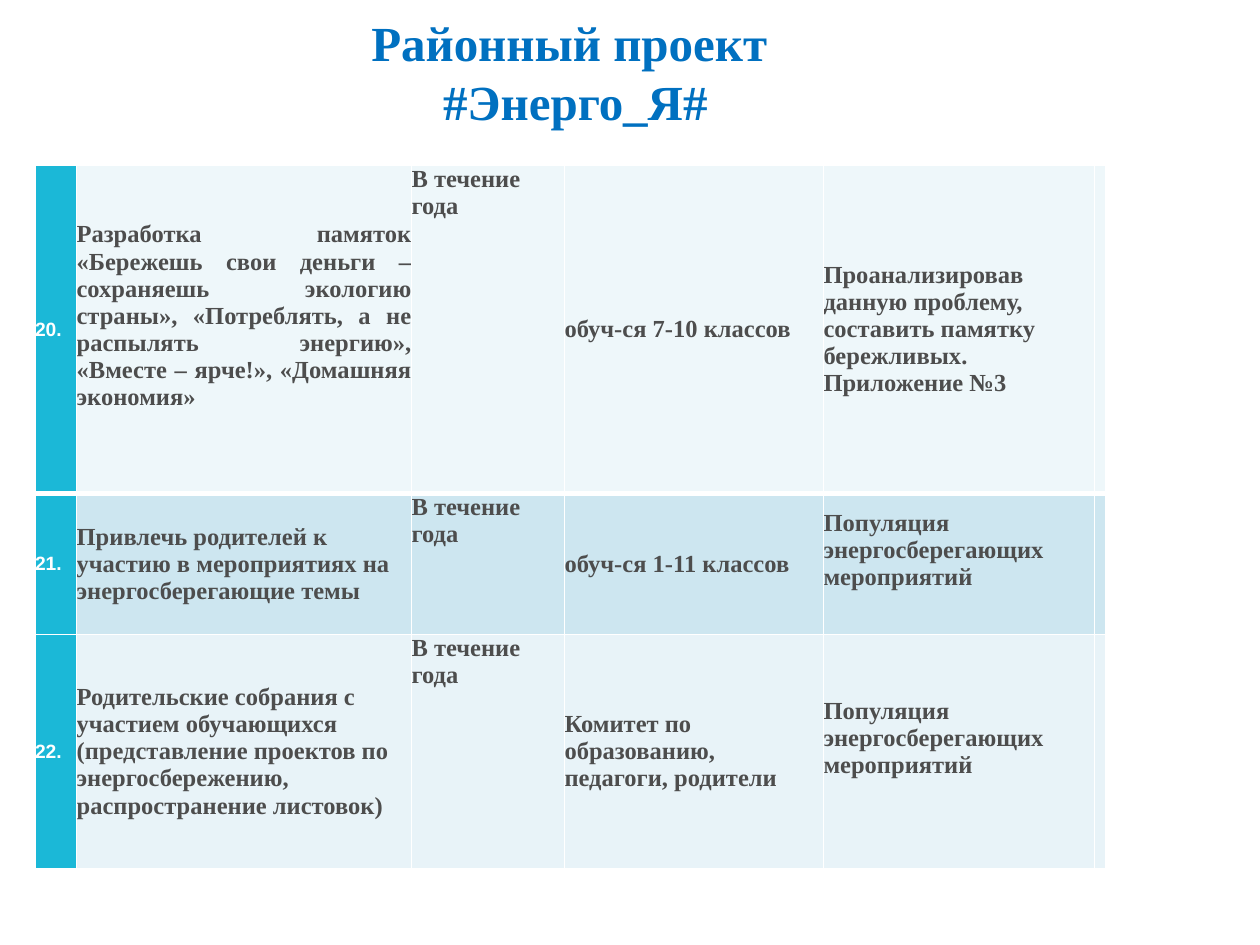
import pptx
import pptx.dml.color
import pptx.enum.text
import pptx.oxml
import pptx.oxml.ns
import pptx.util

Pt = pptx.util.Pt
ALIGN = pptx.enum.text.PP_ALIGN
ANCHOR = pptx.enum.text.MSO_ANCHOR
SERIF = "Times New Roman"
NUMBER_COLUMN, TASK_COLUMN, TIME_COLUMN, RESULT_COLUMN = 0, 1, 2, 4
LINE = 15.5  # height of one line of table text


def color(value):
    return pptx.dml.color.RGBColor.from_string(value)


class SlideBuilder:
    def __init__(self, slide):
        self.slide = slide
        self.title_color = "0070C0"
        self.text_color = "4D4D4D"
        self.number_fill = "1BB8D7"
        self.border_color = "FFFFFF"

    def style(self, paragraph, size, font, hex_color, alignment):
        paragraph.alignment = alignment
        paragraph.font.size = Pt(size)
        paragraph.font.name = font
        paragraph.font.bold = True
        paragraph.font.color.rgb = color(hex_color)

    def title(self, lines, left, top, width, height):
        shape = self.slide.shapes.add_textbox(Pt(left), Pt(top), Pt(width), Pt(height))
        frame = shape.text_frame
        frame.word_wrap = True
        frame.text = "\n".join(lines)
        for paragraph in frame.paragraphs:
            self.style(paragraph, 28, SERIF, self.title_color, ALIGN.CENTER)

    def borders(self, cell, widths):
        properties = cell._tc.get_or_add_tcPr()
        for side, width in widths.items():
            properties.append(pptx.oxml.parse_xml(
                f'<a:ln{side} {pptx.oxml.ns.nsdecls("a")} w="{Pt(width)}"><a:solidFill>'
                f'<a:srgbClr val="{self.border_color}"/></a:solidFill></a:ln{side}>'))

    def cell(self, cell, text, fill, is_number, alignment, anchor, bottom, widths):
        self.borders(cell, widths)
        cell.fill.solid()
        cell.fill.fore_color.rgb = color(fill)
        cell.margin_left = cell.margin_right = cell.margin_top = 0
        cell.margin_bottom = Pt(bottom)
        cell.vertical_anchor = anchor
        cell.text = text
        paragraph = cell.text_frame.paragraphs[0]
        if is_number:
            self.style(paragraph, 11, "Arial", "FFFFFF", alignment)
        else:
            self.style(paragraph, 14, SERIF, self.text_color, alignment)

    def table(self, rows, fills, left, top, widths, heights):
        frame = self.slide.shapes.add_table(
            len(heights), len(widths), Pt(left), Pt(top), Pt(sum(widths)), Pt(sum(heights)))
        table = frame.table
        for column, width in zip(table.columns, widths):
            column.width = Pt(width)
        for row, height in zip(table.rows, heights):
            row.height = Pt(height)
        for i, (texts, fill) in enumerate(zip(rows, fills)):
            # A thick rule parts the first row from the rest
            borders = {"L": 1, "R": 1, "T": 3 if i == 1 else 1, "B": 3 if i == 0 else 1}
            for j, text in enumerate(texts):
                is_number = j == NUMBER_COLUMN
                first_task = i == 0 and j == TASK_COLUMN
                raised = first_task or (i > 0 and j == RESULT_COLUMN)
                self.cell(
                    table.cell(i, j), text,
                    self.number_fill if is_number else fill, is_number,
                    ALIGN.JUSTIFY if first_task else ALIGN.LEFT,
                    ANCHOR.TOP if j == TIME_COLUMN else ANCHOR.MIDDLE,
                    LINE if raised else 0, borders)


def main():
    presentation = pptx.Presentation()
    presentation.slide_width = Pt(720)
    presentation.slide_height = Pt(540)
    slide = presentation.slides.add_slide(presentation.slide_layouts[6])
    builder = SlideBuilder(slide)

    # Project plan
    period = "В течение года"
    promotion = "Популяция энергосберегающих мероприятий"
    rows = [
        ["20.", "Разработка памяток «Бережешь свои деньги – сохраняешь экологию страны», "
         "«Потреблять, а не распылять энергию», «Вместе – ярче!», «Домашняя экономия»",
         period, "обуч-ся 7-10 классов",
         "Проанализировав данную проблему, составить памятку бережливых. Приложение №3", ""],
        ["21.", "Привлечь родителей к участию в мероприятиях на энергосберегающие темы",
         period, "обуч-ся 1-11 классов", promotion, ""],
        ["22.", "Родительские собрания с участием обучающихся (представление проектов "
         "по энергосбережению, распространение листовок)",
         period, "Комитет по образованию, педагоги, родители", promotion, ""],
    ]
    builder.table(rows, ["EEF7FA", "CDE6F0", "E8F3F8"], 20, 94.5,
                  [23.8, 191.4, 87.4, 148, 154.9, 6.3], [187.5, 80.5, 134])

    # Title
    builder.title(["Районный проект ", "#Энерго_Я#"], 31, 3.6, 595.5, 75)

    presentation.save("out.pptx")


if __name__ == "__main__":
    main()
